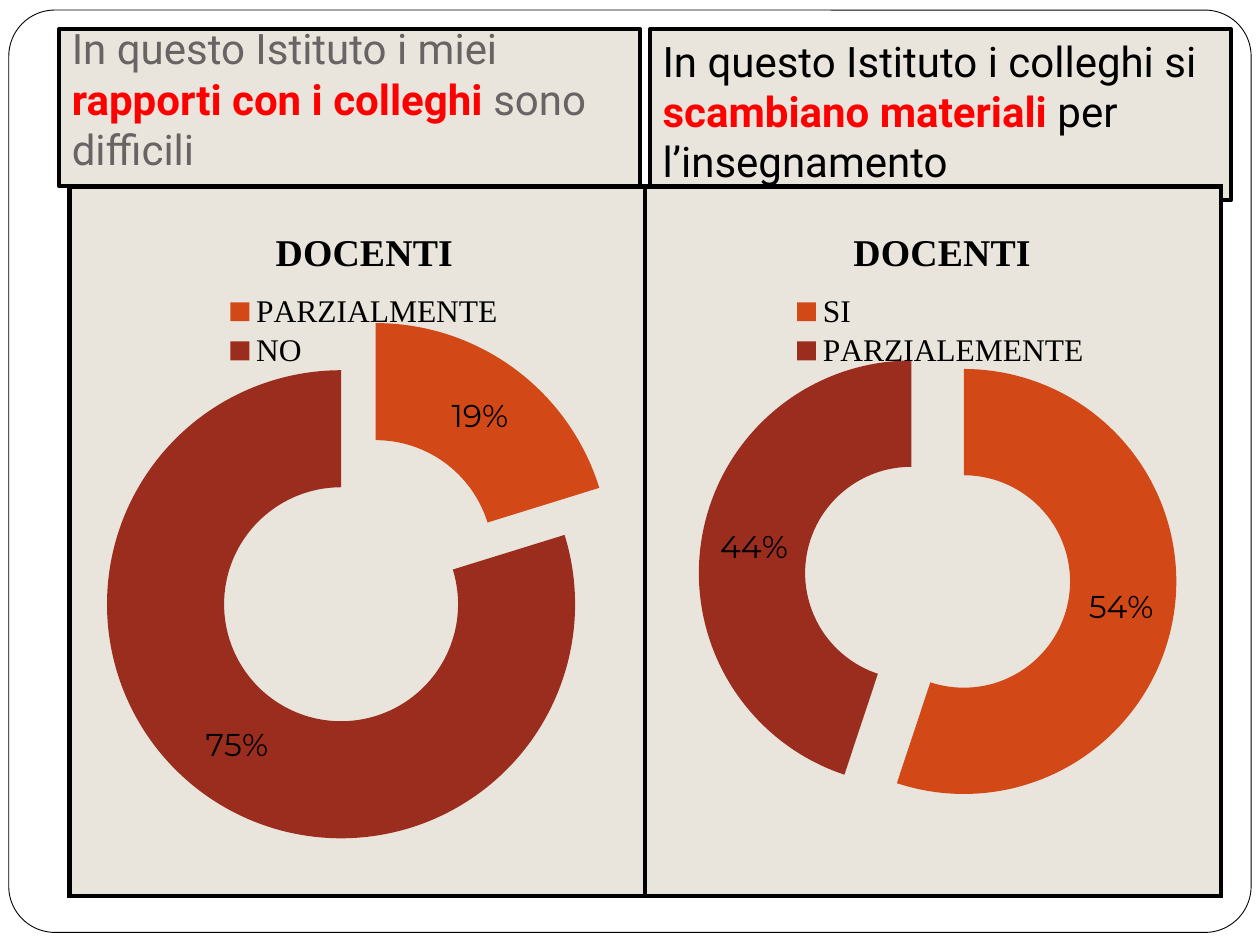
from dataclasses import dataclass

from lxml.etree import SubElement
from pptx import Presentation
from pptx.chart.data import CategoryChartData
from pptx.dml.color import RGBColor
from pptx.enum.chart import XL_CHART_TYPE, XL_LEGEND_POSITION
from pptx.enum.shapes import MSO_SHAPE
from pptx.enum.text import MSO_ANCHOR, MSO_AUTO_SIZE, PP_ALIGN
from pptx.oxml import parse_xml
from pptx.oxml.ns import nsdecls, qn
from pptx.util import Pt

BLACK, RED, GREY, SAND = "000000", "FF0000", "696464", "E9E5DC"
SLICE_COLORS = ("D34817", "9B2D1F")


@dataclass(frozen=True)
class Box:
    """A rectangle, in points on the slide or in fractions of a chart."""
    left: float
    top: float
    width: float
    height: float

    def lengths(self) -> tuple:
        """Return the four measures as lengths in points."""
        return Pt(self.left), Pt(self.top), Pt(self.width), Pt(self.height)


@dataclass(frozen=True)
class Question:
    """A survey question with its key words."""
    box: Box
    before: str
    key: str
    after: str
    color: str
    anchor: MSO_ANCHOR
    bottom_inset: float


@dataclass(frozen=True)
class Answers:
    """The answers to one question, with the places of the chart parts."""
    box: Box
    categories: tuple
    values: tuple
    plot: Box
    legend: Box


QUESTIONS = (
    Question(Box(33.84, 16.56, 331.92, 90), "In questo Istituto i miei ",
             "rapporti con i colleghi ", "sono difficili", GREY, MSO_ANCHOR.BOTTOM, 7.2),
    Question(Box(371.52, 16.56, 331.92, 97.92), "In questo Istituto i colleghi si ",
             "scambiano materiali ", "per l’insegnamento", BLACK, MSO_ANCHOR.TOP, 3.6),
)
ANSWERS = (
    Answers(Box(376.56, 110.16, 315.36, 396), ("SI", "PARZIALEMENTE"), (0.54, 0.44),
            Box(0.07, 0.21, 0.87, 0.69), Box(0.23, 0.14, 0.56, 0.12)),
    Answers(Box(44.64, 110.16, 320.4, 396), ("PARZIALMENTE", "NO"), (0.19, 0.75),
            Box(0.03, 0.18, 0.94, 0.76), Box(0.25, 0.14, 0.52, 0.12)),
)


def color(value: str) -> RGBColor:
    """Turn a hex string into a colour."""
    return RGBColor.from_string(value)


def paint(shape, fill: str, line_width: float) -> None:
    """Give a shape a solid fill and a black outline."""
    shape.fill.solid()
    shape.fill.fore_color.rgb = color(fill)
    shape.line.color.rgb = color(BLACK)
    shape.line.width = Pt(line_width)
    shape.shadow.inherit = False


def style_font(font, name: str, size: float, value: str, bold: bool = False) -> None:
    """Set the face, size, colour and weight of a font."""
    font.name, font.size, font.bold = name, Pt(size), bold
    font.color.rgb = color(value)


def write_question(shape, question: Question) -> None:
    """Place a question box and write its text with the key words in red."""
    shape.left, shape.top, shape.width, shape.height = question.box.lengths()
    paint(shape, SAND, 2.25)
    frame = shape.text_frame
    frame.word_wrap = True
    frame.auto_size = MSO_AUTO_SIZE.NONE
    frame.vertical_anchor = question.anchor
    frame.margin_left = frame.margin_right = Pt(7.2)
    frame.margin_top, frame.margin_bottom = Pt(3.6), Pt(question.bottom_inset)
    paragraph = frame.paragraphs[0]
    paragraph.alignment = PP_ALIGN.LEFT
    for text in (question.before, question.key, question.after):
        run = paragraph.add_run()
        run.text = text
        is_key = text == question.key
        style_font(run.font, "Roboto", 24, RED if is_key else question.color, is_key)


def add_panel_table(slide, box: Box) -> None:
    """Add the two-cell table that frames the charts."""
    table = slide.shapes.add_table(1, 2, *box.lengths()).table
    for cell in table.iter_cells():
        properties = cell._tc.get_or_add_tcPr()
        for side in ("a:lnL", "a:lnR", "a:lnT", "a:lnB"):
            line = SubElement(properties, qn(side), w=str(Pt(3)))
            SubElement(SubElement(line, qn("a:solidFill")), qn("a:srgbClr"), val=BLACK)
        cell.fill.solid()
        cell.fill.fore_color.rgb = color(SAND)


def set_layout(element, index: int, place: Box, inner: bool = False) -> None:
    """Place a chart part at fractions of the chart area."""
    for existing in element.findall(qn("c:layout")):
        element.remove(existing)
    settings = [("layoutTarget", "inner")] if inner else []
    settings += [("xMode", "edge"), ("yMode", "edge"), ("x", place.left), ("y", place.top)]
    if place.width:
        settings += [("w", place.width), ("h", place.height)]
    parts = "".join(f'<c:{name} val="{value}"/>' for name, value in settings)
    element.insert(index, parse_xml(
        f'<c:layout {nsdecls("c")}><c:manualLayout>{parts}</c:manualLayout></c:layout>'))


def add_doughnut(slide, answers: Answers) -> None:
    """Add an exploded doughnut chart with title, legend and labels."""
    data = CategoryChartData(number_format="0%")
    data.categories = answers.categories
    data.add_series("DOCENTI", answers.values)
    chart = slide.shapes.add_chart(
        XL_CHART_TYPE.DOUGHNUT, *answers.box.lengths(), data).chart
    style_font(chart.font, "Times New Roman", 18, BLACK)
    chart.element.find(qn("c:chart")).addnext(parse_xml(
        f'<c:spPr {nsdecls("c", "a")}><a:noFill/><a:ln><a:noFill/></a:ln></c:spPr>'))

    chart.has_title = True
    title_frame = chart.chart_title.text_frame
    title_frame.text = "DOCENTI"
    style_font(title_frame.paragraphs[0].runs[0].font, "Times New Roman", 21.6, BLACK, True)
    chart.has_legend = True
    chart.legend.position = XL_LEGEND_POSITION.TOP
    chart.legend.include_in_layout = True

    plot = chart.plots[0]
    plot.vary_by_categories = True
    series = plot.series[0]
    chart.element.find(f'.//{qn("c:ser")}/{qn("c:tx")}').addnext(
        parse_xml(f'<c:explosion {nsdecls("c")} val="25"/>'))
    for index, value in enumerate(SLICE_COLORS):
        fill = series.points[index].format.fill
        fill.solid()
        fill.fore_color.rgb = color(value)
    labels = series.data_labels
    labels.show_value = True
    labels.show_percentage = False
    labels.number_format = "0%"
    labels.number_format_is_linked = False
    style_font(labels.font, "Montserrat", 18, BLACK)

    set_layout(chart.element.find(".//" + qn("c:plotArea")), 0, answers.plot, True)
    set_layout(chart.element.find(".//" + qn("c:title")), 1, Box(0.34, 0.04, 0, 0))
    set_layout(chart.element.find(".//" + qn("c:legend")), 1, answers.legend)


def main() -> None:
    """Build the slide and save it."""
    presentation = Presentation()
    presentation.slide_width, presentation.slide_height = Pt(720), Pt(540)
    slide = presentation.slides.add_slide(presentation.slide_layouts[5])
    title = slide.shapes.title

    border = slide.shapes.add_shape(
        MSO_SHAPE.ROUNDED_RECTANGLE, *Box(5.04, 5.76, 709.92, 527.04).lengths())
    border.adjustments[0] = 0.05
    paint(border, "FFFFFF", 0.5)
    title._element.addprevious(border._element)

    second_box = slide.shapes.add_shape(MSO_SHAPE.RECTANGLE, *QUESTIONS[1].box.lengths())
    for shape, question in zip((title, second_box), QUESTIONS):
        write_question(shape, question)
    add_panel_table(slide, Box(39.6, 106.56, 658.08, 405.36))
    for answers in ANSWERS:
        add_doughnut(slide, answers)
    presentation.save("out.pptx")


if __name__ == "__main__":
    main()
